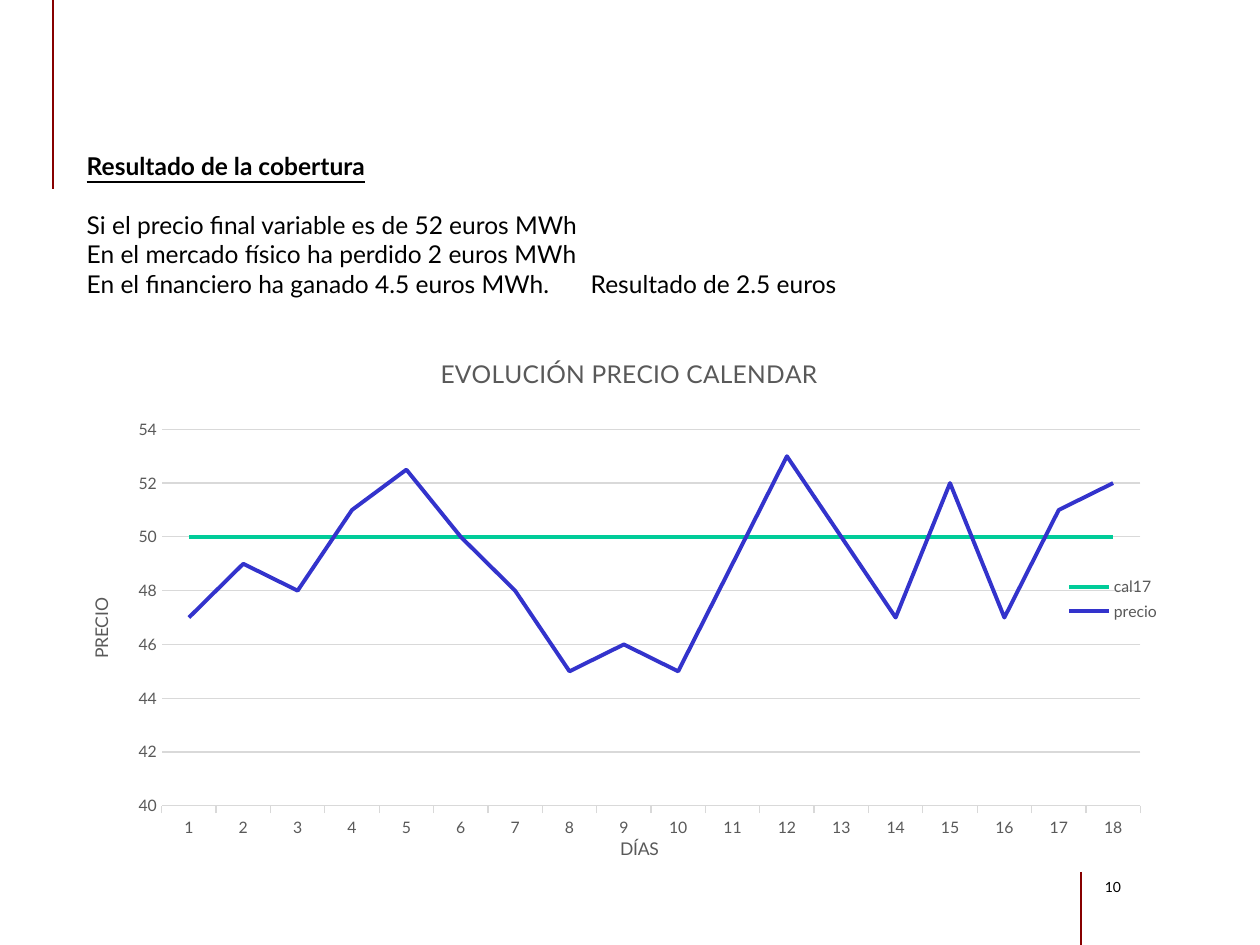
"""Build the hedge result slide with its price line chart."""
from dataclasses import dataclass

from lxml import etree
from pptx import Presentation
from pptx.chart.data import CategoryChartData
from pptx.dml.color import RGBColor
from pptx.enum.chart import XL_CHART_TYPE, XL_LEGEND_POSITION, XL_MARKER_STYLE, XL_TICK_MARK
from pptx.enum.shapes import MSO_CONNECTOR
from pptx.oxml.ns import qn
from pptx.util import Inches, Pt

LINE = XL_CHART_TYPE.LINE
RIGHT = XL_LEGEND_POSITION.RIGHT
NO_MARKER = XL_MARKER_STYLE.NONE
TICK_NONE, TICK_OUT = XL_TICK_MARK.NONE, XL_TICK_MARK.OUTSIDE
STRAIGHT = MSO_CONNECTOR.STRAIGHT
FONT = "Lato"
BLACK, GREY, GRID, RED = "000000", "595959", "D9D9D9", "870000"


@dataclass
class Rule:
    x: float
    top: float
    bottom: float


@dataclass
class Line:
    text: str
    heading: bool = False
    before: float = 0


@dataclass
class Series:
    name: str
    values: list[float]
    color: str


RULES = [Rule(8.58, 6.92, 7.5), Rule(0.42, 0, 1.5)]
RESULT = [
    Line("Resultado de la cobertura", heading=True),
    Line("Si el precio final variable es de 52 euros MWh", before=16.8),
    Line("En el mercado físico ha perdido 2 euros MWh"),
    Line("En el financiero ha ganado 4.5 euros MWh. \tResultado de 2.5 euros"),
]
PRICES = [47, 49, 48, 51, 52.5, 50, 48, 45, 46, 45, 49, 53, 50, 47, 52, 47, 51, 52]
SERIES = [
    Series("cal17", [50] * len(PRICES), "00CC99"),
    Series("precio", PRICES, "3333CC"),
]


def rgb(color: str) -> RGBColor:
    return RGBColor.from_string(color)


def set_font(font, size: float, color: str, bold: bool = False) -> None:
    font.name, font.size, font.bold = FONT, Pt(size), bold
    font.color.rgb = rgb(color)


def set_line(line, color: str, width: float) -> None:
    line.color.rgb = rgb(color)
    line.width = Pt(width)


def add_rule(s, rule: Rule) -> None:
    x = Inches(rule.x)
    c = s.shapes.add_connector(STRAIGHT, x, Inches(rule.top), x, Inches(rule.bottom))
    set_line(c.line, RED, 0.75)
    etree.SubElement(c._element.spPr, qn("a:effectLst"))


def add_text(s, box: tuple, lines: list[Line], size: float) -> None:
    tf = s.shapes.add_textbox(*map(Inches, box)).text_frame
    tf.word_wrap = True
    for i, line in enumerate(lines):
        p = tf.add_paragraph() if i else tf.paragraphs[0]
        if line.before:
            p.space_before = Pt(line.before)
        r = p.add_run()
        r.text = line.text
        set_font(r.font, size, BLACK, line.heading)
        r.font.underline = line.heading


def set_title(owner, text: str, size: float) -> None:
    r = owner.text_frame.paragraphs[0].add_run()
    r.text = text
    set_font(r.font, size, GREY)


def set_layout(parent, index: int, inner: bool, box: tuple) -> None:
    for old in parent.findall(qn("c:layout")):
        parent.remove(old)
    layout = etree.Element(qn("c:layout"))
    parent.insert(index, layout)
    manual = etree.SubElement(layout, qn("c:manualLayout"))
    settings = [("layoutTarget", "inner")] if inner else []
    settings += [("xMode", "edge"), ("yMode", "edge"), *zip("xywh", box)]
    for tag, value in settings:
        etree.SubElement(manual, qn(f"c:{tag}")).set("val", str(value))


def add_price_chart(s, box: tuple) -> None:
    data = CategoryChartData()
    data.categories = [str(day) for day in range(1, len(PRICES) + 1)]
    for item in SERIES:
        data.add_series(item.name, item.values)
    chart = s.shapes.add_chart(LINE, *map(Inches, box), data).chart
    set_font(chart.font, 10, BLACK)
    set_title(chart.chart_title, "EVOLUCIÓN PRECIO CALENDAR", 14)
    chart.chart_title.include_in_layout = False

    plot = chart.plots[0]
    plot.vary_by_categories = False
    for series, item in zip(plot.series, SERIES):
        series.smooth = False
        series.marker.style = NO_MARKER
        set_line(series.format.line, item.color, 2.25)

    days, price = chart.category_axis, chart.value_axis
    for axis, title in ((days, "DÍAS"), (price, "PRECIO")):
        set_title(axis.axis_title, title, 10)
        set_font(axis.tick_labels.font, 9, GREY)
    days.major_tick_mark = TICK_OUT
    set_line(days.format.line, GRID, 0.75)
    price.major_tick_mark = TICK_NONE
    price.format.line.fill.background()
    price.minimum_scale, price.maximum_scale, price.major_unit = 40, 54, 2
    set_line(price.major_gridlines.format.line, GRID, 0.75)

    chart.has_legend = True
    legend = chart.legend
    legend.position = RIGHT
    legend.include_in_layout = False
    set_font(legend.font, 9, GREY)
    set_layout(legend._element, 1, False, (0.89, 0.45, 0.11, 0.1))
    plot_area = chart._chartSpace.chart.plotArea
    set_layout(plot_area, 0, True, (0.07, 0.18, 0.9, 0.71))


def main() -> None:
    prs = Presentation()
    prs.slide_width, prs.slide_height = Inches(10), Inches(7.5)
    s = prs.slides.add_slide(prs.slide_layouts[6])
    for rule in RULES:
        add_rule(s, rule)
    add_text(s, (8.67, 6.92, 0.64, 0.5), [Line("10")], 8)
    add_text(s, (0.59, 1.15, 6.77, 1.28), RESULT, 14)
    add_price_chart(s, (0.68, 2.65, 8.63, 4.21))
    prs.save("out.pptx")


if __name__ == "__main__":
    main()
